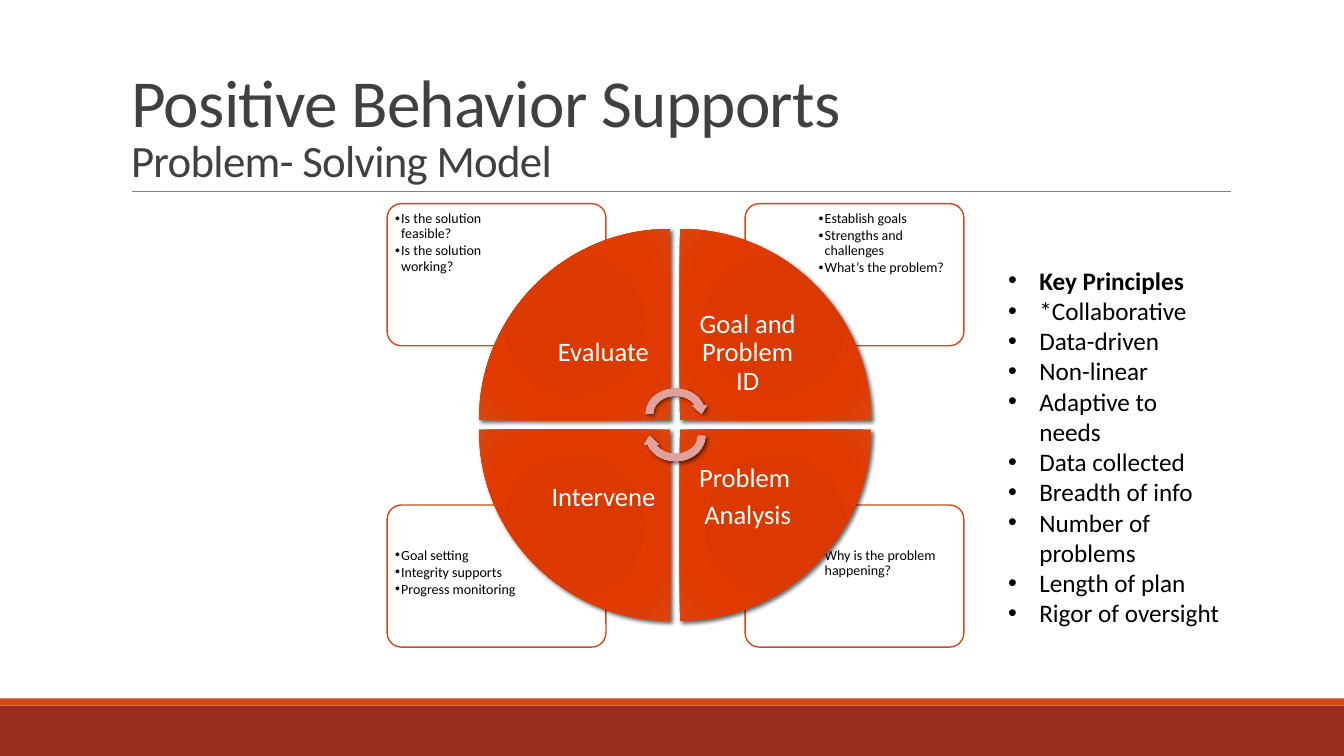
from lxml import etree
from pptx import Presentation
from pptx import util as u
from pptx.dml.color import RGBColor
from pptx.enum import shapes, text
from pptx.oxml import ns

PX = 9144  # EMU per px, at 100 px to the inch
FONT = "Calibri"
WHITE = RGBColor(0xFF, 0xFF, 0xFF)
BLACK = RGBColor(0, 0, 0)
TITLE_GRAY = RGBColor(0x40, 0x40, 0x40)
RULE_GRAY = RGBColor(0x80, 0x80, 0x80)
BRICK = RGBColor(0x9B, 0x2D, 0x1F)
ORANGE = RGBColor(0xD3, 0x48, 0x17)


def stops(*values):
    return list(zip((0, 34, 70, 100), map(RGBColor.from_string, values)))


WEDGE_STOPS = stops("DA3900", "DC3900", "E03A00", "DC440E")
ARROW_STOPS = stops("DE9E98", "DFA19B", "E4A29C", "E9AFA9")

# Card left, top, text left, text top, bullets
CARDS = [
    (739, 501, 807, 539, ["Why is the problem happening?"]),
    (384, 501, 387, 539, ["Goal setting", "Integrity supports", "Progress monitoring"]),
    (739, 202, 807, 205,
     ["Establish goals", "Strengths and challenges", "What’s the problem?"]),
    (384, 202, 387, 205, ["Is the solution feasible?", "Is the solution working?"]),
]
# Clockwise from the upper left: wedge left, top, label left, top, lines
WEDGES = [
    (475, 227, 531, 283, ["Evaluate"]),
    (674, 227, 674, 283, ["Goal and Problem ID"]),
    (674, 426, 674, 426, ["Problem ", "Analysis"]),
    (475, 426, 531, 426, ["Intervene"]),
]
PRINCIPLES = [
    "Key Principles", "*Collaborative", "Data-driven", "Non-linear",
    "Adaptive to needs", "Data collected", "Breadth of info",
    "Number of problems", "Length of plan", "Rigor of oversight",
]


def px(*lengths):
    return [length * PX for length in lengths]


def add_child(parent, tag, **attributes):
    child = etree.SubElement(parent, ns.qn(tag))
    for name, value in attributes.items():
        child.set(name, str(value))
    return child


def add_color(parent, color):
    return add_child(parent, "a:srgbClr", val=color)


def style_font(font, size, color):
    font.name, font.size = FONT, u.Pt(size)
    font.color.rgb = color


def add_plain(page, kind, place, fill, line=None):
    shape = page.shapes.add_shape(kind, *px(*place))
    shape.shadow.inherit = False
    shape.fill.solid()
    shape.fill.fore_color.rgb = fill
    if line is None:
        shape.line.fill.background()
    else:
        shape.line.color.rgb = line
        shape.line.width = u.Pt(1)
    return shape


def add_glossy(page, kind, place, colors, rotation):
    """Shape with a round gradient and a soft shadow."""
    shape = add_plain(page, kind, place, colors[0][1])
    shape.rotation = rotation
    properties = shape.element.spPr

    gradient = etree.Element(ns.qn("a:gradFill"), rotWithShape="1")
    stop_list = add_child(gradient, "a:gsLst")
    for position, color in colors:
        add_color(add_child(stop_list, "a:gs", pos=position * 1000), color)
    circle = add_child(gradient, "a:path", path="circle")
    add_child(circle, "a:fillToRect", l=100000, t=100000, r=100000, b=100000)
    properties.replace(properties.find(ns.qn("a:solidFill")), gradient)

    effects = properties.find(ns.qn("a:effectLst"))
    shadow = add_child(effects, "a:outerShdw", blurRad=u.Pt(3), dist=u.Pt(2),
                       dir=45 * 60000, algn="ctr", rotWithShape=0)
    add_child(add_color(shadow, BLACK), "a:alpha", val=60000)
    return shape


def add_text(page, place, lines, size, color=BLACK, inset=None, indent=0,
             spacing=1.0, after=0, align=text.PP_ALIGN.LEFT,
             anchor=text.MSO_ANCHOR.TOP):
    """Text box; an indent gives its paragraphs bullets."""
    box = page.shapes.add_textbox(*px(*place))
    frame = box.text_frame
    frame.word_wrap = True
    frame.vertical_anchor = anchor
    if inset is not None:
        frame.margin_left = frame.margin_right = inset * PX
        frame.margin_top = frame.margin_bottom = inset * PX
    frame.text = "\n".join(lines)
    for para in frame.paragraphs:
        para.alignment = align
        para.line_spacing = spacing
        para.space_after = u.Pt(after)
        if indent:
            properties = para._p.get_or_add_pPr()
            properties.set("marL", str(indent * PX))
            properties.set("indent", str(-indent * PX))
            add_child(properties, "a:buFont", typeface="Arial")
            add_child(properties, "a:buChar", char="•")
        for span in para.runs:
            style_font(span.font, size, color)
    return box


def add_title(page):
    title = page.shapes.title
    title.left, title.top, title.width, title.height = px(120, 31, 1100, 159)
    frame = title.text_frame
    frame.word_wrap = True
    frame.auto_size = text.MSO_AUTO_SIZE.NONE
    frame.vertical_anchor = text.MSO_ANCHOR.BOTTOM
    para = frame.paragraphs[0]
    para.text = "Positive Behavior Supports\vProblem- Solving Model"
    para.alignment = text.PP_ALIGN.LEFT
    para.line_spacing = 0.85
    for span, size in zip(para.runs, (48, 32)):
        style_font(span.font, size, TITLE_GRAY)
        span.font._element.set("spc", "-50")


def add_rule(page):
    rule = page.shapes.add_connector(
        shapes.MSO_CONNECTOR.STRAIGHT, *px(131, 190, 1221, 190))
    rule.line.color.rgb = RULE_GRAY
    rule.line.width = u.Pt(0.5)
    add_child(rule.element.spPr, "a:effectLst")


def main():
    kinds = shapes.MSO_SHAPE
    deck = Presentation()
    deck.slide_width, deck.slide_height = px(1333, 750)
    page = deck.slides.add_slide(deck.slide_layouts[5])

    # Frame of the page
    add_plain(page, kinds.RECTANGLE, (0, 700, 1333, 50), BRICK)
    add_plain(page, kinds.RECTANGLE, (0, 693, 1333, 7), ORANGE)
    add_rule(page)
    add_title(page)

    # Corner cards, behind the wheel
    for left, top, text_left, text_top, bullets in CARDS:
        card = add_plain(page, kinds.ROUNDED_RECTANGLE, (left, top, 217, 141),
                         WHITE, ORANGE)
        card.adjustments[0] = 0.1
        add_text(page, (text_left, text_top, 146, 99), bullets, 10, inset=5,
                 indent=6, spacing=0.9, after=1.3)

    # Wheel of four wedges
    for turn, (left, top, text_left, text_top, lines) in enumerate(WEDGES):
        add_glossy(page, kinds.PIE_WEDGE, (left, top, 190, 190),
                   WEDGE_STOPS, turn * 90)
        add_text(page, (text_left, text_top, 135, 135), lines, 19, WHITE,
                 inset=15, spacing=0.9, after=6.5,
                 align=text.PP_ALIGN.CENTER, anchor=text.MSO_ANCHOR.MIDDLE)

    # Arrows at the hub
    for top, rotation in ((382, 0), (404, 180)):
        add_glossy(page, kinds.CIRCULAR_ARROW, (637, top, 66, 57),
                   ARROW_STOPS, rotation)

    # Key principles
    principles = add_text(page, (990, 258, 230, 464), PRINCIPLES, 18, indent=31)
    principles.text_frame.auto_size = text.MSO_AUTO_SIZE.SHAPE_TO_FIT_TEXT
    principles.text_frame.paragraphs[0].runs[0].font.bold = True

    deck.save("out.pptx")


if __name__ == "__main__":
    main()
